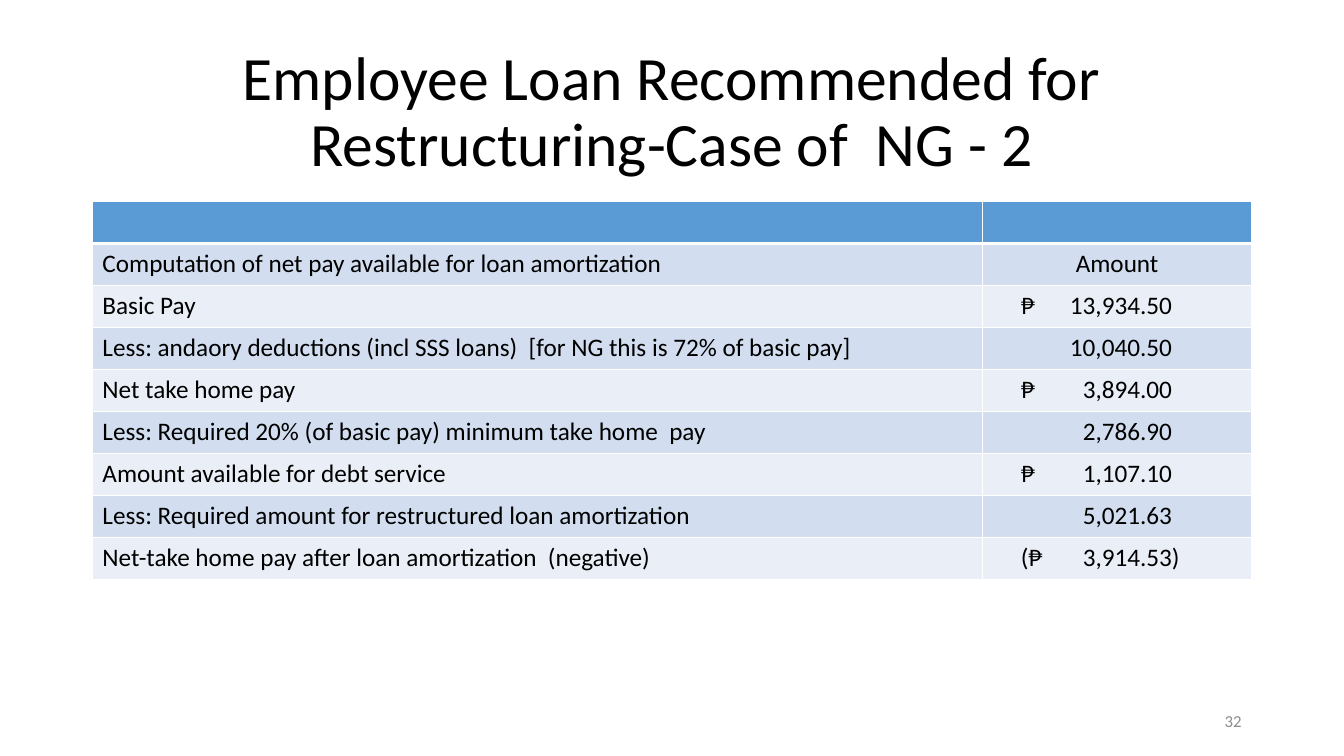
from dataclasses import dataclass

from lxml import etree
from pptx import Presentation
from pptx import util as u
from pptx.dml import color
from pptx.enum import text
from pptx.oxml import ns

# Content
TITLE = "Employee Loan Recommended for Restructuring-Case of  NG - 2"
PAGE_NUMBER = "32"
HEADING = ("Computation of net pay available for loan amortization", "Amount")
# Each entry: label, currency sign, amount
ENTRIES = [
    ("Basic Pay", "₱", "13,934.50"),
    ("Less: andaory deductions (incl SSS loans)  [for NG this is 72% of basic pay]",
     "", "10,040.50"),
    ("Net take home pay", "₱", "3,894.00"),
    ("Less: Required 20% (of basic pay) minimum take home  pay", "", "2,786.90"),
    ("Amount available for debt service", "₱", "1,107.10"),
    ("Less: Required amount for restructured loan amortization", "", "5,021.63"),
    ("Net-take home pay after loan amortization  (negative)", "(₱", "3,914.53)"),
]


@dataclass(frozen=True)
class Theme:
    font: str = "Calibri"
    ink: str = "000000"
    muted: str = "8C8C8C"
    header: str = "5B9BD5"
    bands: tuple = ("D2DEEF", "EAEFF7")
    rule: str = "FFFFFF"
    title_size: int = 44
    table_size: int = 18
    number_size: int = 12


THEME = Theme()
LEFT, WIDTH = 66, 828
TABLE_TOP, ROW_HEIGHT = 144, 30
COLUMNS = (636, 192)
SIGN_STOP, AMOUNT_STOP, BRACKET_WIDTH = 20, 128, 5.5


def add_span(para, words, size, ink=THEME.ink):
    span = para.add_run()
    span.text = words
    span.font.name = THEME.font
    span.font.size = u.Pt(size)
    span.font.bold = False
    span.font.color.rgb = color.RGBColor.from_string(ink)


def set_tabs(para, stops):
    tabs = etree.SubElement(para._p.get_or_add_pPr(), ns.qn("a:tabLst"))
    for position, align in stops:
        etree.SubElement(tabs, ns.qn("a:tab"), pos=str(u.Pt(position)), algn=align)


def paint_cell(cell, fill, bottom):
    cell.fill.solid()
    cell.fill.fore_color.rgb = color.RGBColor.from_string(fill)
    properties = cell._tc.get_or_add_tcPr()
    sides = (("a:lnL", 1), ("a:lnR", 1), ("a:lnT", 1), ("a:lnB", bottom))
    for place, (side, weight) in enumerate(sides):
        line = etree.Element(ns.qn(side), w=str(u.Pt(weight)))
        paint = etree.SubElement(line, ns.qn("a:solidFill"))
        etree.SubElement(paint, ns.qn("a:srgbClr"), val=THEME.rule)
        properties.insert(place, line)


def add_title(page):
    box = page.shapes.title
    box.left, box.top, box.width, box.height = map(u.Pt, (LEFT, 28.75, WIDTH, 104.4))
    frame = box.text_frame
    frame.word_wrap = True
    frame.auto_size = text.MSO_AUTO_SIZE.NONE
    frame.vertical_anchor = text.MSO_ANCHOR.MIDDLE
    para = frame.paragraphs[0]
    para.alignment = text.PP_ALIGN.CENTER
    para.line_spacing = 0.9
    add_span(para, TITLE, THEME.title_size)


def add_pay_table(page):
    count = len(ENTRIES) + 2
    table = page.shapes.add_table(
        count, len(COLUMNS), u.Pt(LEFT), u.Pt(TABLE_TOP),
        u.Pt(WIDTH), u.Pt(ROW_HEIGHT * count)).table
    for column, width in zip(table.columns, COLUMNS):
        column.width = u.Pt(width)

    # Fills and rules: blank header, then alternating bands
    for index, row in enumerate(table.rows):
        row.height = u.Pt(ROW_HEIGHT)
        fill = THEME.bands[(index - 1) % 2] if index else THEME.header
        for cell in row.cells:
            paint_cell(cell, fill, 1 if index else 3)

    # Heading row
    for column, words in enumerate(HEADING):
        para = table.cell(1, column).text_frame.paragraphs[0]
        add_span(para, words, THEME.table_size)
    para.alignment = text.PP_ALIGN.CENTER

    # Pay entries, with signs and amounts on tab stops
    for index, (label, sign, amount) in enumerate(ENTRIES, start=2):
        para = table.cell(index, 0).text_frame.paragraphs[0]
        add_span(para, label, THEME.table_size)
        para = table.cell(index, 1).text_frame.paragraphs[0]
        overhang = BRACKET_WIDTH if amount.endswith(")") else 0
        set_tabs(para, ((SIGN_STOP, "l"), (AMOUNT_STOP + overhang, "r")))
        add_span(para, f"\t{sign}\t{amount}", THEME.table_size)


def add_page_number(page):
    box = page.shapes.add_textbox(*map(u.Pt, (678, 500.5, 216, 28.75)))
    frame = box.text_frame
    frame.word_wrap = True
    frame.vertical_anchor = text.MSO_ANCHOR.MIDDLE
    para = frame.paragraphs[0]
    para.alignment = text.PP_ALIGN.RIGHT
    add_span(para, PAGE_NUMBER, THEME.number_size, THEME.muted)


def main():
    deck = Presentation()
    deck.slide_width, deck.slide_height = u.Pt(960), u.Pt(540)
    page = deck.slides.add_slide(deck.slide_layouts[5])
    add_title(page)
    add_pay_table(page)
    add_page_number(page)
    deck.save("out.pptx")


if __name__ == "__main__":
    main()
